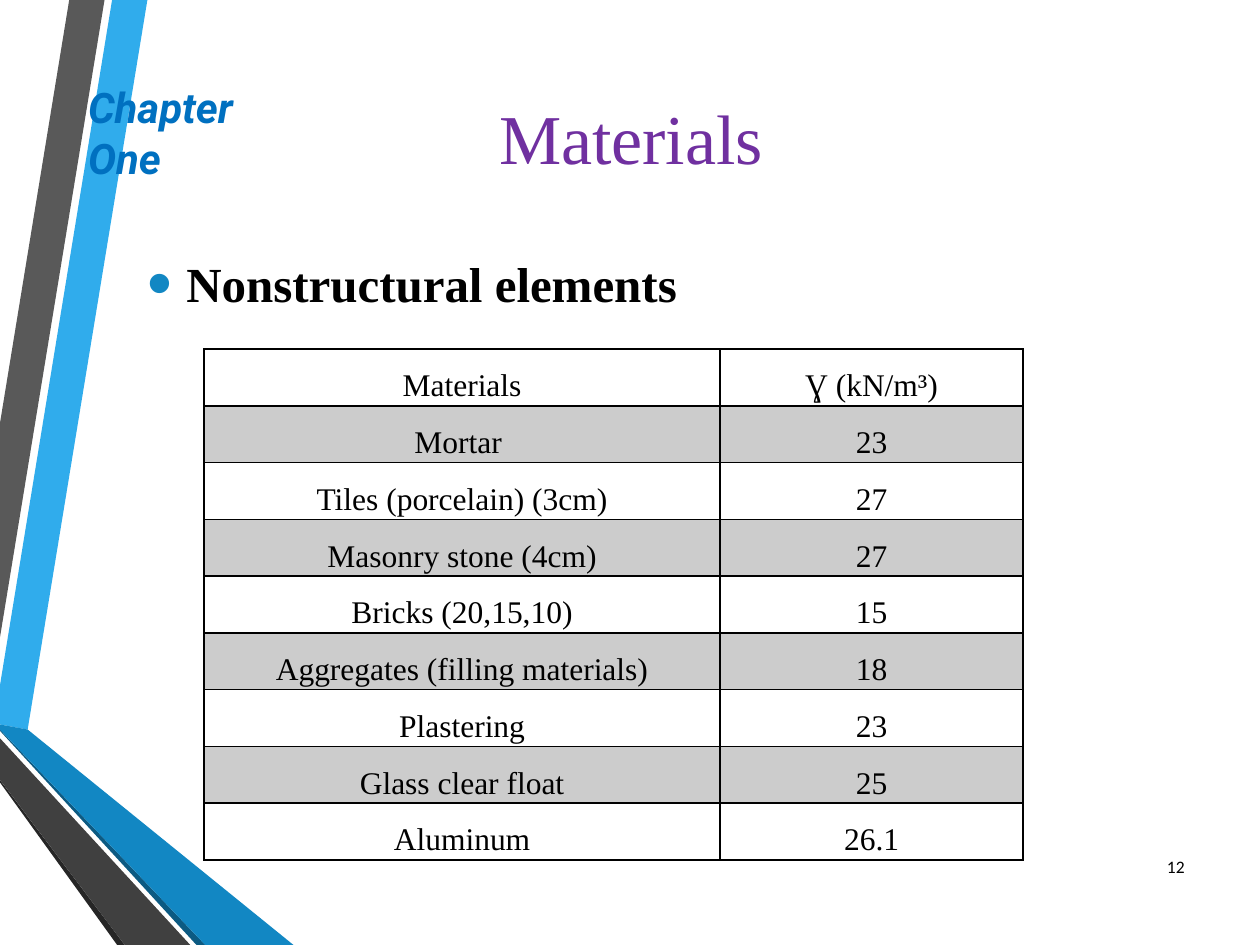
from collections import namedtuple

from lxml import etree
from pptx import Presentation
from pptx import util as u
from pptx.dml.color import RGBColor
from pptx.enum import text
from pptx.oxml import ns

Box = namedtuple("Box", "left top width height")
COLORS = {
    "sky": "30ACEC",
    "gray": "595959",
    "charcoal": "262626",
    "navy": "0C5A82",
    "blue": "1287C3",
    "slate": "404040",
    "purple": "7030A0",
    "chapter": "0070C0",
    "black": "000000",
}
STRIPES = [
    ("sky", [(0, 5.44), (0, 5.75), (0.22, 5.79), (1.17, 0), (0.89, 0)]),
    ("gray", [(0.83, 0), (0.55, 0), (0, 3.36), (0, 5.06)]),
    ("charcoal", [(0, 6.19), (0, 6.21), (0.93, 7.5), (0.99, 7.5)]),
    ("navy", [(0, 5.79), (0, 5.8), (1.56, 7.5), (1.63, 7.5)]),
    ("blue", [(0, 5.79), (1.63, 7.5), (2.33, 7.5), (0.22, 5.79), (0, 5.75)]),
    ("slate", [(0, 6.19), (0.99, 7.5), (1.51, 7.5), (0, 5.86)]),
]
DENSITIES = [
    ("Materials", "Ɣ (kN/m³)"),
    ("Mortar ", "23"),
    ("Tiles (porcelain) (3cm)", "27"),
    ("Masonry stone (4cm)", "27"),
    ("Bricks (20,15,10)", "15"),
    ("Aggregates (filling materials)", "18"),
    ("Plastering", "23"),
    ("Glass clear float", "25"),
    ("Aluminum", "26.1"),
]
SERIF = "Times New Roman"


def color(name):
    return RGBColor.from_string(COLORS[name])


def add_child(parent, tag, **attributes):
    return etree.SubElement(parent, ns.qn(tag), attributes)


def add_span(para, words, size, font, tint, bold=False, italic=False):
    span = para.add_run()
    span.text = words
    span.font.size = u.Pt(size)
    span.font.name = font
    span.font.color.rgb = color(tint)
    span.font.bold = bold
    span.font.italic = italic


def add_text(page, box, anchor, align):
    frame = page.shapes.add_textbox(*map(u.Inches, box)).text_frame
    frame.word_wrap = True
    frame.vertical_anchor = anchor
    frame.paragraphs[0].alignment = align
    return frame


def add_stripes(page, box):
    for tint, points in STRIPES:
        corners = [(u.Inches(box.left + x), u.Inches(box.top + y)) for x, y in points]
        builder = page.shapes.build_freeform(*corners[0])
        builder.add_line_segments(corners[1:], close=True)
        stripe = builder.convert_to_shape()
        stripe.shadow.inherit = False
        stripe.fill.solid()
        stripe.fill.fore_color.rgb = color(tint)
        stripe.line.fill.background()


def add_title(page, box):
    frame = add_text(page, box, text.MSO_ANCHOR.MIDDLE, text.PP_ALIGN.CENTER)
    add_span(frame.paragraphs[0], "Materials", 40, SERIF, "purple")


def add_bullet(page, box):
    frame = add_text(page, box, text.MSO_ANCHOR.TOP, text.PP_ALIGN.LEFT)
    frame.margin_top = u.Inches(0.3)
    para = frame.paragraphs[0]
    para.space_after = u.Pt(6)
    add_span(para, "Nonstructural elements", 28, SERIF, "black", bold=True)
    props = para._p.get_or_add_pPr()
    props.set("marL", str(u.Inches(0.31)))
    props.set("indent", str(-u.Inches(0.31)))
    add_child(add_child(props, "a:buClr"), "a:srgbClr", val=COLORS["blue"])
    add_child(props, "a:buSzPct", val="145000")
    add_child(props, "a:buFont", typeface="Arial")
    add_child(props, "a:buChar", char="•")


def add_page_number(page, box):
    frame = add_text(page, box, text.MSO_ANCHOR.MIDDLE, text.PP_ALIGN.RIGHT)
    add_span(frame.paragraphs[0], "12", 10, "Calibri", "black")


def add_chapter(page, box):
    frame = add_text(page, box, text.MSO_ANCHOR.TOP, text.PP_ALIGN.LEFT)
    add_span(frame.paragraphs[0], "Chapter One", 24, "Roboto", "chapter", True, True)


def style_cell(cell, shaded):
    cell.margin_left = cell.margin_right = u.Inches(0.07)
    cell.margin_top = cell.margin_bottom = 0
    cell.vertical_anchor = text.MSO_ANCHOR.MIDDLE
    props = cell._tc.get_or_add_tcPr()
    if shaded:
        cell.fill.solid()
        cell.fill.fore_color.rgb = color("black")
        add_child(props.find(".//" + ns.qn("a:srgbClr")), "a:alpha", val="20000")
    else:
        cell.fill.background()
    for place, side in enumerate(("a:lnL", "a:lnR", "a:lnT", "a:lnB")):
        border = etree.Element(ns.qn(side), w=str(u.Pt(1)))
        add_child(add_child(border, "a:solidFill"), "a:srgbClr", val=COLORS["black"])
        props.insert(place, border)


def add_density_table(page, box):
    frame = page.shapes.add_table(len(DENSITIES), 2, *map(u.Inches, box))
    table = frame.table
    for column, share in zip(table.columns, (0.63, 0.37)):
        column.width = u.Inches(box.width * share)
    for index, values in enumerate(DENSITIES):
        for place, value in enumerate(values):
            cell = table.cell(index, place)
            style_cell(cell, index % 2 == 1)
            para = cell.text_frame.paragraphs[0]
            para.alignment = text.PP_ALIGN.CENTER
            para.line_spacing = 1.5
            para.space_after = u.Pt(6)
            add_span(para, value, 18, SERIF, "black")


def main():
    deck = Presentation()
    deck.slide_width = u.Inches(10)
    deck.slide_height = u.Inches(7.5)
    page = deck.slides.add_slide(deck.slide_layouts[6])
    add_stripes(page, Box(0, 0, 2.33, 7.5))
    add_title(page, Box(1.29, 0.6, 7.44, 0.97))
    add_bullet(page, Box(1.07, 1.71, 8.01, 4.78))
    add_page_number(page, Box(9.03, 6.68, 0.47, 0.4))
    add_density_table(page, Box(1.62, 2.77, 6.5, 3.82))
    add_chapter(page, Box(0.6, 0.6, 1.51, 0.5))
    deck.save("out.pptx")


if __name__ == "__main__":
    main()
